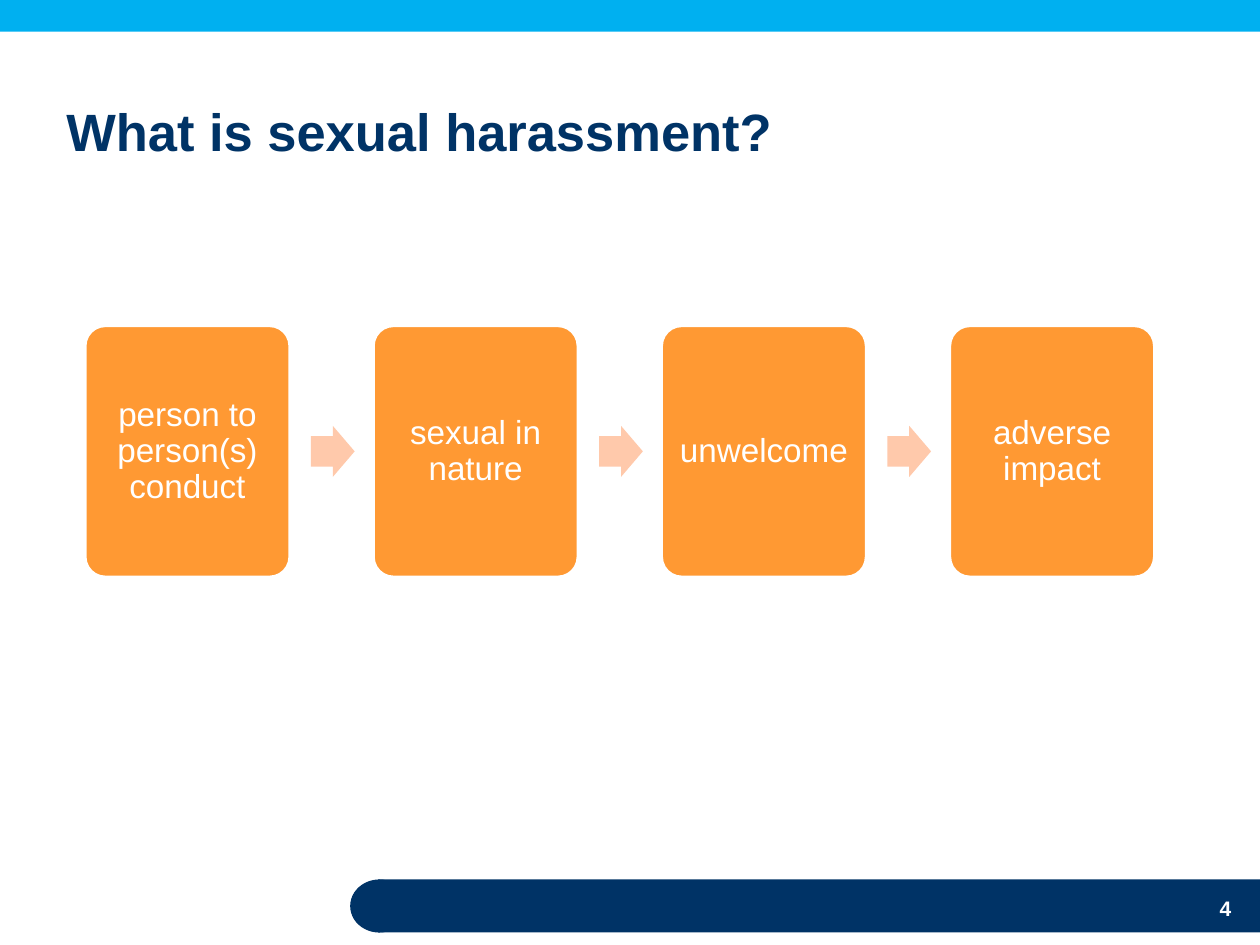
from pptx import Presentation
from pptx.dml.color import RGBColor
from pptx.enum.shapes import MSO_SHAPE as SHAPE
from pptx.enum.text import MSO_ANCHOR as ANCHOR, PP_ALIGN as ALIGN
from pptx.util import Cm, Pt

# Content
TITLE = "What is sexual harassment?"
STEPS = ["person to person(s) conduct", "sexual in nature", "unwelcome", "adverse impact"]
PAGE = "4"

# Style and layout, in cm
NAVY, SKY, ORANGE, PEACH, WHITE = "003366", "00B0F0", "FF9933", "FFC9AB", "FFFFFF"
SLIDE_W, SLIDE_H = 25.4, 19.05
CARD_X, CARD_Y, CARD_W, CARD_H, PITCH = 1.71, 6.56, 4.14, 5.08, 5.81
ARROW_W, ARROW_H, ARROW_DX = 0.88, 1.03, 4.56
BARS = [
    (SHAPE.RECTANGLE, 7.62, 17.73, 17.78, 1.07, NAVY),
    (SHAPE.OVAL, 7.06, 17.73, 1.17, 1.07, NAVY),
    (SHAPE.RECTANGLE, 0, 0, SLIDE_W, 0.64, SKY),
]


def rgb(value):
    return RGBColor.from_string(value)


def add_shape(kind, x, y, w, h, fill, adjust=()):
    sp = s.shapes.add_shape(kind, Cm(x), Cm(y), Cm(w), Cm(h))
    sp.shadow.inherit = False
    sp.fill.solid()
    sp.fill.fore_color.rgb = rgb(fill)
    sp.line.fill.background()
    for i, value in enumerate(adjust):
        sp.adjustments[i] = value
    return sp


def write(sp, text, size, color, bold=False, align=ALIGN.LEFT, anchor=ANCHOR.TOP):
    tf = sp.text_frame
    tf.word_wrap = True
    tf.vertical_anchor = anchor
    p = tf.paragraphs[0]
    p.alignment = align
    r = p.add_run()
    r.text = text
    r.font.name, r.font.size, r.font.bold = "Arial", Pt(size), bold
    r.font.color.rgb = rgb(color)
    return tf


def add_text(x, y, w, h, *args, **style):
    write(s.shapes.add_textbox(Cm(x), Cm(y), Cm(w), Cm(h)), *args, **style)


prs = Presentation()
prs.slide_width, prs.slide_height = Cm(SLIDE_W), Cm(SLIDE_H)
s = prs.slides.add_slide(prs.slide_layouts[6])

# Header and footer bars, page number
for bar in BARS:
    add_shape(*bar)
add_text(22.33, 17.93, 2.74, 0.64, PAGE, 12, WHITE, bold=True, align=ALIGN.RIGHT)

# Title
add_text(1.09, 0.43, 21.59, 2.97, TITLE, 30, NAVY, bold=True, anchor=ANCHOR.BOTTOM)

# Step cards, with an arrow between neighbours
for i, step in enumerate(STEPS):
    x = CARD_X + i * PITCH
    card = add_shape(SHAPE.ROUNDED_RECTANGLE, x, CARD_Y, CARD_W, CARD_H, ORANGE, [0.1])
    card.line.color.rgb = rgb(WHITE)
    card.line.width = Pt(2)
    tf = write(card, step, 19, WHITE, align=ALIGN.CENTER, anchor=ANCHOR.MIDDLE)
    tf.margin_left = tf.margin_right = tf.margin_top = tf.margin_bottom = Cm(0.2)
    tf.paragraphs[0].line_spacing = 0.9
    if i < len(STEPS) - 1:
        add_shape(SHAPE.RIGHT_ARROW, x + ARROW_DX, CARD_Y + (CARD_H - ARROW_H) / 2,
                  ARROW_W, ARROW_H, PEACH, [0.6, 0.5])

prs.save("out.pptx")
